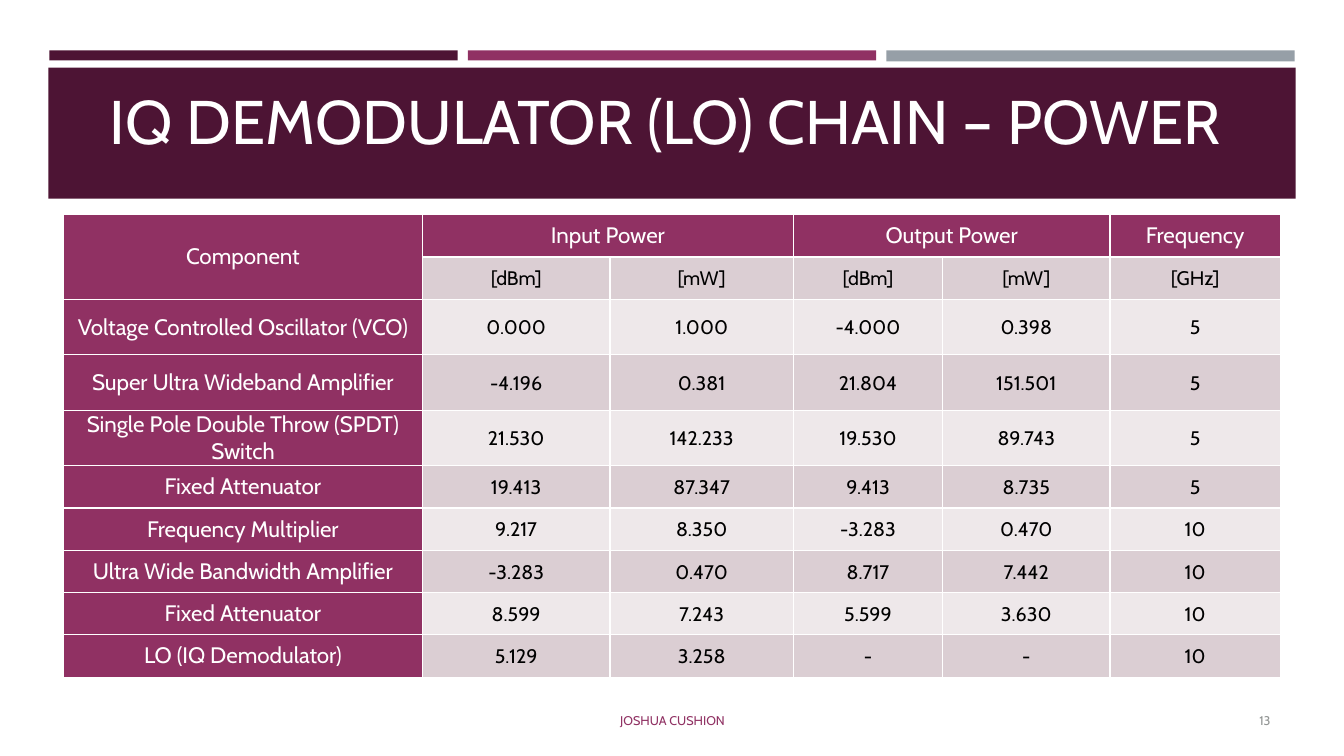
"""Build the IQ demodulator power table slide."""
from pptx import Presentation
from pptx.dml.color import RGBColor
from pptx.enum import shapes, text
from pptx.oxml import parse_xml
from pptx.oxml.ns import nsdecls
from pptx.util import Inches, Pt

DARK, PLUM, GREY, WHITE = "4D1434", "903163", "969FA7", "FFFFFF"
BANDS = "EEE8EA", "DBCED3"
MID = text.MSO_ANCHOR.MIDDLE


def paint(fill, color):
    fill.solid()
    fill.fore_color.rgb = RGBColor.from_string(color)


def write(frame, words, size=14, color="000000", align="CENTER", space=1.0):
    para = frame.paragraphs[0]
    para.alignment = getattr(text.PP_ALIGN, align)
    para.line_spacing = space
    run = para.add_run()
    run.text = words
    run.font.name, run.font.size, run.font.bold = "Cabin", Pt(size), False
    run.font.color.rgb = RGBColor.from_string(color)


deck = Presentation()
deck.slide_width, deck.slide_height = Inches(13.33), Inches(7.5)
slide = deck.slides.add_slide(deck.slide_layouts[5])

bars = [
    (0.49, 0.5, 4.05, 0.1, DARK),
    (4.64, 0.5, 4.05, 0.1, PLUM),
    (8.79, 0.5, 4.05, 0.11, GREY),
    (0.48, 0.67, 12.37, 1.3, DARK),
]
for *box, color in bars:
    bar = slide.shapes.add_shape(shapes.MSO_SHAPE.RECTANGLE, *map(Inches, box))
    bar.shadow.inherit = False
    paint(bar.fill, color)
    bar.line.fill.background()

title = slide.shapes.title
title.element.getparent().append(title.element)
title.left, title.top = Inches(0.64), Inches(0.77)
title.width, title.height = Inches(12.06), Inches(1.11)
frame = title.text_frame
frame.auto_size = text.MSO_AUTO_SIZE.NONE
frame.vertical_anchor = text.MSO_ANCHOR.TOP
write(frame, "IQ DEMODULATOR (LO) CHAIN – POWER ", size=44, color=WHITE)

rows = [
    ("Component", "Input Power", "", "Output Power", "", "Frequency"),
    ("", "[dBm]", "[mW]", "[dBm]", "[mW]", "[GHz]"),
    ("Voltage Controlled Oscillator (VCO)", "0.000", "1.000", "-4.000", "0.398", "5"),
    ("Super Ultra Wideband Amplifier", "-4.196", "0.381", "21.804", "151.501", "5"),
    ("Single Pole Double Throw (SPDT) Switch", "21.530", "142.233", "19.530", "89.743", "5"),
    ("Fixed Attenuator", "19.413", "87.347", "9.413", "8.735", "5"),
    ("Frequency Multiplier", "9.217", "8.350", "-3.283", "0.470", "10"),
    ("Ultra Wide Bandwidth Amplifier", "-3.283", "0.470", "8.717", "7.442", "10"),
    ("Fixed Attenuator", "8.599", "7.243", "5.599", "3.630", "10"),
    ("LO (IQ Demodulator)", "5.129", "3.258", "-", "-", "10"),
]
widths = 3.56, 1.86, 1.82, 1.48, 1.66, 1.69
box = map(Inches, (0.63, 2.13, 12.07, 4.59))
table = slide.shapes.add_table(len(rows), len(widths), *box).table
for col, width in zip(table.columns, widths):
    col.width = Inches(width)

for r, row in enumerate(rows):
    table.rows[r].height = Inches(0.55 if 2 <= r <= 4 else 0.42)
    for c, words in enumerate(row):
        cell = table.cell(r, c)
        head = r == 0 or c == 0
        cell.vertical_anchor = MID
        cell.margin_left = cell.margin_right = Inches(0.07)
        cell.margin_top = cell.margin_bottom = 0
        props = cell._tc.get_or_add_tcPr()
        for side in "LRTB":
            props.append(parse_xml(
                f'<a:ln{side} {nsdecls("a")} w="12700"><a:solidFill>'
                f'<a:srgbClr val="{WHITE}"/></a:solidFill></a:ln{side}>'))
        paint(cell.fill, PLUM if head else BANDS[r % 2])
        if words:
            write(cell.text_frame, words, size=16 if head else 14,
                  color=WHITE if head else "000000",
                  space=1.0 if head or r == 1 else 1.07)

for start, end in [((0, 0), (1, 0)), ((0, 1), (0, 2)), ((0, 3), (0, 4))]:
    table.cell(*start).merge(table.cell(*end))

notes = [
    (3.56, 6.22, "JOSHUA CUSHION", PLUM, "CENTER"),
    (11.55, 1.15, "13", "929594", "RIGHT"),
]
for left, width, words, color, align in notes:
    foot = slide.shapes.add_textbox(Inches(left), Inches(6.95), Inches(width), Inches(0.4))
    foot.text_frame.word_wrap = True
    foot.text_frame.vertical_anchor = MID
    write(foot.text_frame, words, size=9, color=color, align=align)

deck.save("out.pptx")
